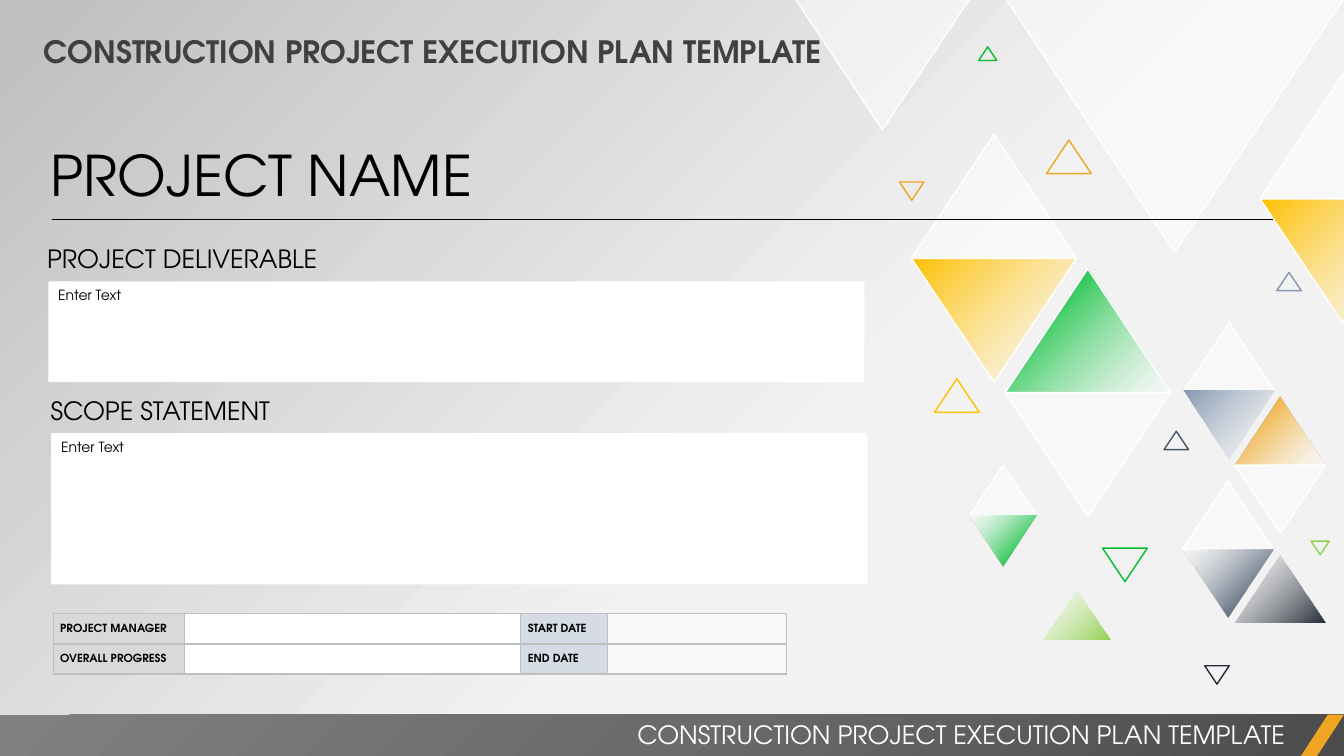
import pptx
from lxml import etree
from pptx.dml.color import RGBColor
from pptx.enum.shapes import MSO_CONNECTOR, MSO_SHAPE
from pptx.enum.text import MSO_ANCHOR, MSO_AUTO_SIZE, PP_ALIGN
from pptx.oxml import parse_xml
from pptx.oxml.ns import nsdecls, qn
from pptx.util import Pt

FONT = "TeX Gyre Adventor"
BLACK = RGBColor(0x00, 0x00, 0x00)
WHITE = RGBColor(0xFF, 0xFF, 0xFF)
CHARCOAL = RGBColor(0x40, 0x40, 0x40)
LIGHT_GRAY = RGBColor(0xF2, 0xF2, 0xF2)
MID_GRAY = RGBColor(0xBF, 0xBF, 0xBF)
LABEL_GRAY = RGBColor(0xD9, 0xD9, 0xD9)
LABEL_BLUE = RGBColor(0xD6, 0xDC, 0xE5)
PALE_BLUE = RGBColor(0xF7, 0xF9, 0xFB)
YELLOW = RGBColor(0xFF, 0xC0, 0x00)
ORANGE = RGBColor(0xF0, 0xA6, 0x22)
GREEN = RGBColor(0x00, 0xBD, 0x32)
LIME = RGBColor(0x92, 0xD0, 0x50)
BLUE = RGBColor(0x84, 0x97, 0xB0)
SLATE = RGBColor(0x44, 0x54, 0x6A)
INK = RGBColor(0x22, 0x2A, 0x35)
BAND_STOPS = [
    (0, RGBColor(0x4C, 0x4C, 0x4C)),
    (50, RGBColor(0x6B, 0x6B, 0x6B)),
    (100, RGBColor(0x80, 0x80, 0x80)),
]

UP, DOWN = 0, 180
TRIANGLE_RATIO = 0.75  # height / width
GLASS = [(0, WHITE)]


def fade_out(color):
    return [(0, color), (100, WHITE)]


def fade_in(color):
    return [(0, WHITE), (82, color)]


# left, top, width, upper fill, lower fill
DIAMONDS = [
    (651, 96, 118, GLASS, fade_out(YELLOW)),
    (718, 192, 118, fade_in(GREEN), GLASS),
    (844.5, 343.5, 65, GLASS, fade_in(SLATE)),
    (845.5, 230.5, 65, GLASS, fade_out(BLUE)),
    (882, 283.5, 65, fade_in(ORANGE), GLASS),
    (692.5, 332.5, 48, GLASS, fade_in(GREEN)),
    (900, 53.5, 118, GLASS, fade_out(YELLOW)),
]
# left, top, width, direction, fill
SINGLE_TRIANGLES = [
    (718, -1.5, 242, DOWN, GLASS),
    (567.5, -1.5, 125.5, DOWN, GLASS),
    (881.5, 396, 65, UP, fade_out(INK)),
    (745, 421, 48, UP, fade_out(LIME)),
]
# left, top, width, direction, line color
OUTLINES = [
    (787.5, 391.5, 32, DOWN, GREEN),
    (667.5, 270.5, 32, UP, YELLOW),
    (831.5, 308, 17.5, UP, SLATE),
    (860.5, 475.5, 17.5, DOWN, INK),
    (642.5, 130, 17.5, DOWN, ORANGE),
    (912, 194.5, 17.5, UP, BLUE),
    (699, 33.5, 13, UP, GREEN),
    (936.5, 386.5, 13, DOWN, LIME),
    (747.5, 100, 32, UP, ORANGE),
]

TITLE = "CONSTRUCTION PROJECT EXECUTION PLAN TEMPLATE"
# text, left, top, width, height, size, color, bold, alignment
TEXTS = [
    (TITLE, 24, 20, 620, 34, 22, CHARCOAL, True, PP_ALIGN.LEFT),
    (TITLE, 378, 510, 547, 29, 18, WHITE, False, PP_ALIGN.RIGHT),
    ("PROJECT NAME", 29, 97, 883, 55.5, 40, BLACK, False, PP_ALIGN.LEFT),
    ("PROJECT DELIVERABLE", 26.5, 170, 220, 29, 18, BLACK, False, PP_ALIGN.LEFT),
    ("SCOPE STATEMENT", 29, 278.5, 220, 29, 18, BLACK, False, PP_ALIGN.LEFT),
]
# left, top, width, height
ENTRY_BOXES = [(34.5, 201, 583, 72), (36.5, 309.5, 583, 108)]
ENTRY_TEXT = "Enter Text"

TABLE_ROWS = [
    ["PROJECT MANAGER", "", "START DATE", ""],
    ["OVERALL PROGRESS", "", "END DATE", ""],
]
COLUMN_WIDTHS = [93.5, 240.5, 62, 128]
COLUMN_FILLS = [LABEL_GRAY, WHITE, LABEL_BLUE, PALE_BLUE]
ROW_HEIGHT = 21.5

presentation = pptx.Presentation()
presentation.slide_width, presentation.slide_height = Pt(960), Pt(540)
slide = presentation.slides.add_slide(presentation.slide_layouts[6])


def set_gradient(fill, stops):
    """Blend two (position, color) stops from bottom right to top left."""
    fill.gradient()
    fill.gradient_angle = 135
    for stop, (position, color) in zip(fill.gradient_stops, stops):
        stop.position = position / 100
        stop.color.rgb = color


def add_shape(kind, left, top, width, height):
    shape = slide.shapes.add_shape(kind, Pt(left), Pt(top), Pt(width), Pt(height))
    shape.shadow.inherit = False
    shape.fill.background()
    shape.line.fill.background()
    return shape


def set_solid(fill, color):
    fill.solid()
    fill.fore_color.rgb = color


def add_triangle(left, top, width, direction, stops=None, line=None):
    """Add a triangle whose white fill parts are half transparent."""
    shape = add_shape(MSO_SHAPE.ISOSCELES_TRIANGLE, left, top, width, width * TRIANGLE_RATIO)
    shape.rotation = direction
    if stops:
        if len(stops) == 1:
            set_solid(shape.fill, stops[0][1])
        else:
            set_gradient(shape.fill, stops)
        for color in shape.element.spPr.iter(qn("a:srgbClr")):
            if color.get("val") == str(WHITE):
                etree.SubElement(color, qn("a:alpha"), val="50000")
        if stops is GLASS or width > 100:
            line = WHITE
    if line is not None:
        shape.line.color.rgb = line
        shape.line.width = Pt(1)


def write(paragraph, text, size, color, bold=False):
    paragraph.text = text
    for run in paragraph.runs:
        run.font.name = FONT
        run.font.size = Pt(size)
        run.font.bold = bold
        run.font.color.rgb = color


def add_band():
    """Add the footer band, shaded outwards from its bottom right corner."""
    band = add_shape(MSO_SHAPE.RECTANGLE, 0, 510.5, 960, 30)
    stops = "".join(
        f'<a:gs pos="{position * 1000}"><a:srgbClr val="{color}"/></a:gs>'
        for position, color in BAND_STOPS
    )
    gradient = parse_xml(
        f'<a:gradFill {nsdecls("a")} rotWithShape="1"><a:gsLst>{stops}</a:gsLst>'
        '<a:path path="circle"><a:fillToRect l="100000" t="100000"/></a:path></a:gradFill>'
    )
    properties = band.element.spPr
    properties.replace(properties.find(qn("a:noFill")), gradient)


def add_borders(cell):
    properties = cell._tc.get_or_add_tcPr()
    for index, side in enumerate(("lnL", "lnR", "lnT", "lnB")):
        properties.insert(index, parse_xml(
            f'<a:{side} {nsdecls("a")} w="12700"><a:solidFill>'
            f'<a:srgbClr val="{MID_GRAY}"/></a:solidFill></a:{side}>'
        ))


def add_status_table():
    frame = slide.shapes.add_table(
        len(TABLE_ROWS), len(COLUMN_WIDTHS), Pt(38), Pt(438.5),
        Pt(sum(COLUMN_WIDTHS)), Pt(ROW_HEIGHT * len(TABLE_ROWS)))
    table = frame.table
    table.first_row = table.horz_banding = False
    for column, width in zip(table.columns, COLUMN_WIDTHS):
        column.width = Pt(width)
    for row, labels in zip(table.rows, TABLE_ROWS):
        row.height = Pt(ROW_HEIGHT)
        for cell, label, color in zip(row.cells, labels, COLUMN_FILLS):
            set_solid(cell.fill, color)
            cell.vertical_anchor = MSO_ANCHOR.MIDDLE
            cell.margin_left = cell.margin_right = Pt(5)
            cell.margin_top = cell.margin_bottom = 0
            paragraph = cell.text_frame.paragraphs[0]
            paragraph.line_spacing = 1.07
            if label:
                write(paragraph, label, 8, BLACK, True)
            else:
                etree.SubElement(paragraph._p, qn("a:endParaRPr"), sz="800")
            add_borders(cell)


set_gradient(slide.background.fill, [(40, LIGHT_GRAY), (100, MID_GRAY)])

for left, top, width, upper, lower in DIAMONDS:
    add_triangle(left, top, width, UP, upper)
    add_triangle(left, top + width * TRIANGLE_RATIO, width, DOWN, lower)
for triangle in SINGLE_TRIANGLES:
    add_triangle(*triangle)
for left, top, width, direction, color in OUTLINES:
    add_triangle(left, top, width, direction, line=color)

add_band()
accent = add_shape(MSO_SHAPE.PARALLELOGRAM, 929, 510.5, 31, 30)
accent.adjustments[0] = 0.65
set_solid(accent.fill, ORANGE)

for text, left, top, width, height, size, color, bold, alignment in TEXTS:
    box = slide.shapes.add_textbox(Pt(left), Pt(top), Pt(width), Pt(height))
    box.text_frame.word_wrap = True
    box.text_frame.auto_size = MSO_AUTO_SIZE.SHAPE_TO_FIT_TEXT
    paragraph = box.text_frame.paragraphs[0]
    paragraph.alignment = alignment
    write(paragraph, text, size, color, bold)

rule = slide.shapes.add_connector(MSO_CONNECTOR.STRAIGHT, Pt(37.5), Pt(157), Pt(909.5), Pt(157))
rule.line.color.rgb = BLACK
rule.line.width = Pt(0.5)
etree.SubElement(rule._element.spPr, qn("a:effectLst"))

add_status_table()

for bounds in ENTRY_BOXES:
    box = add_shape(MSO_SHAPE.RECTANGLE, *bounds)
    set_solid(box.fill, WHITE)
    box.text_frame.word_wrap = True
    box.text_frame.vertical_anchor = MSO_ANCHOR.TOP
    paragraph = box.text_frame.paragraphs[0]
    write(paragraph, ENTRY_TEXT, 10, BLACK)
    paragraph.alignment = PP_ALIGN.LEFT

presentation.save("out.pptx")
